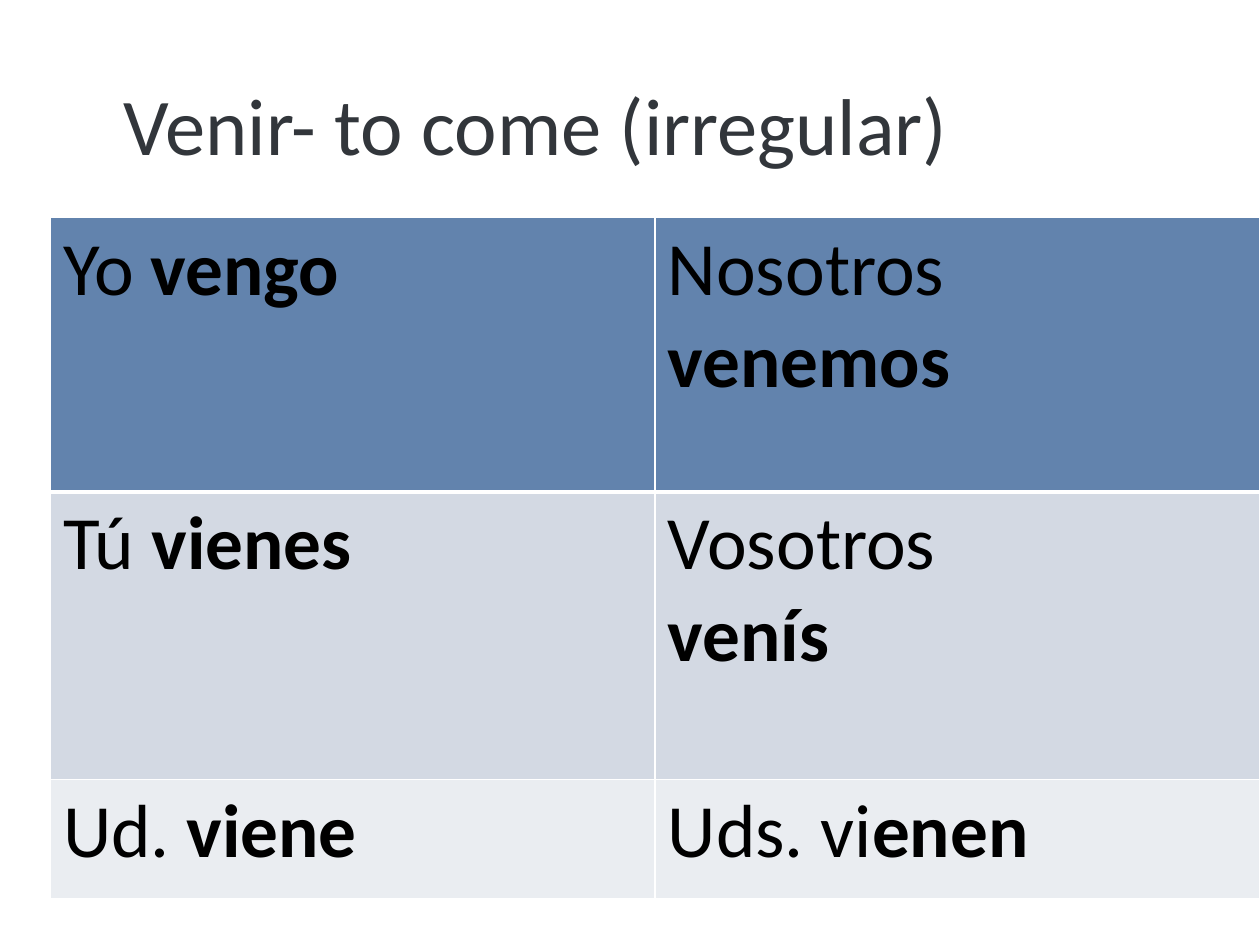
from lxml import etree
from pptx import Presentation
from pptx.dml.color import RGBColor
from pptx.enum.text import MSO_ANCHOR, PP_ALIGN
from pptx.oxml.ns import qn
from pptx.util import Inches, Pt

CENTER = PP_ALIGN.CENTER
MIDDLE, TOP = MSO_ANCHOR.MIDDLE, MSO_ANCHOR.TOP
TITLE_ONLY = 5

COLORS = {
    "title": "32363B",
    "text": "000000",
    "border": "FFFFFF",
    "head": "6283AD",
    "band": "D3D9E3",
    "plain": "EAEDF1",
}
TITLE_FORMAT = {"name": "Calibri", "size": Pt(46), "bold": False}
CELL_FORMAT = {"name": "Calibri", "size": Pt(43)}

# Each row: fill, height in inches, cells; a cell is paragraphs of (text, bold)
CONJUGATION = [
    ("head", 2.18, [
        [[("Yo ", False), ("vengo", True)]],
        [[("Nosotros", False)], [("venemos", True)]],
    ]),
    ("band", 2.28, [
        [[("Tú ", False), ("vienes", True)]],
        [[("Vosotros", False)], [("venís", True)]],
    ]),
    ("plain", 0.95, [
        [[("Ud. ", False), ("viene", True)]],
        [[("Uds. vi", False), ("enen", True)]],
    ]),
]


class VerbPage:
    """Holds the style and the current slide."""

    def __init__(self, deck):
        self.width, self.height = deck.slide_width, deck.slide_height
        self.page = deck.slides.add_slide(deck.slide_layouts[TITLE_ONLY])

    def area(self, left, top, width, height):
        """Turn shares of the slide's size into lengths."""
        return (int(left * self.width), int(top * self.height),
                int(width * self.width), int(height * self.height))

    def span(self, para, text, color, values):
        span = para.add_run()
        span.text = text
        for name, value in values.items():
            setattr(span.font, name, value)
        span.font.color.rgb = RGBColor.from_string(COLORS[color])

    def title(self, text, *shares):
        box = self.page.shapes.title
        box.left, box.top, box.width, box.height = self.area(*shares)
        box.text_frame.vertical_anchor = MIDDLE
        para = box.text_frame.paragraphs[0]
        para.alignment = CENTER
        self.span(para, text, "title", TITLE_FORMAT)

    def borders(self, cell, widths):
        properties = cell._tc.get_or_add_tcPr()
        for side, points in widths.items():
            line = etree.SubElement(properties, qn(f"a:ln{side}"), w=str(Pt(points)))
            fill = etree.SubElement(line, qn("a:solidFill"))
            etree.SubElement(fill, qn("a:srgbClr"), val=COLORS["border"])

    def cell(self, cell, paragraphs, fill, widths):
        self.borders(cell, widths)
        cell.fill.solid()
        cell.fill.fore_color.rgb = RGBColor.from_string(COLORS[fill])
        cell.vertical_anchor = TOP
        frame = cell.text_frame
        for index, spans in enumerate(paragraphs):
            para = frame.add_paragraph() if index else frame.paragraphs[0]
            for text, bold in spans:
                self.span(para, text, "text", {**CELL_FORMAT, "bold": bold})

    def table(self, rows, *shares):
        columns = len(rows[0][2])
        table = self.page.shapes.add_table(len(rows), columns, *self.area(*shares)).table
        for row_index, (fill, height, cells) in enumerate(rows):
            table.rows[row_index].height = Inches(height)
            widths = {
                "L": 1,
                "R": 1,
                "T": 3 if row_index == 1 else 1,
                "B": 3 if row_index == 0 else 1,
            }
            for column, paragraphs in enumerate(cells):
                self.cell(table.cell(row_index, column), paragraphs, fill, widths)


def main():
    deck = Presentation()
    deck.slide_width, deck.slide_height = Inches(10), Inches(7.5)
    page = VerbPage(deck)

    # Heading
    page.title("Venir- to come (irregular)", 0.04, 0.08, 0.77, 0.1)

    # Conjugation table, running to the right edge
    page.table(CONJUGATION, 0.04, 0.23, 0.96, 0.72)

    deck.save("out.pptx")


if __name__ == "__main__":
    main()
